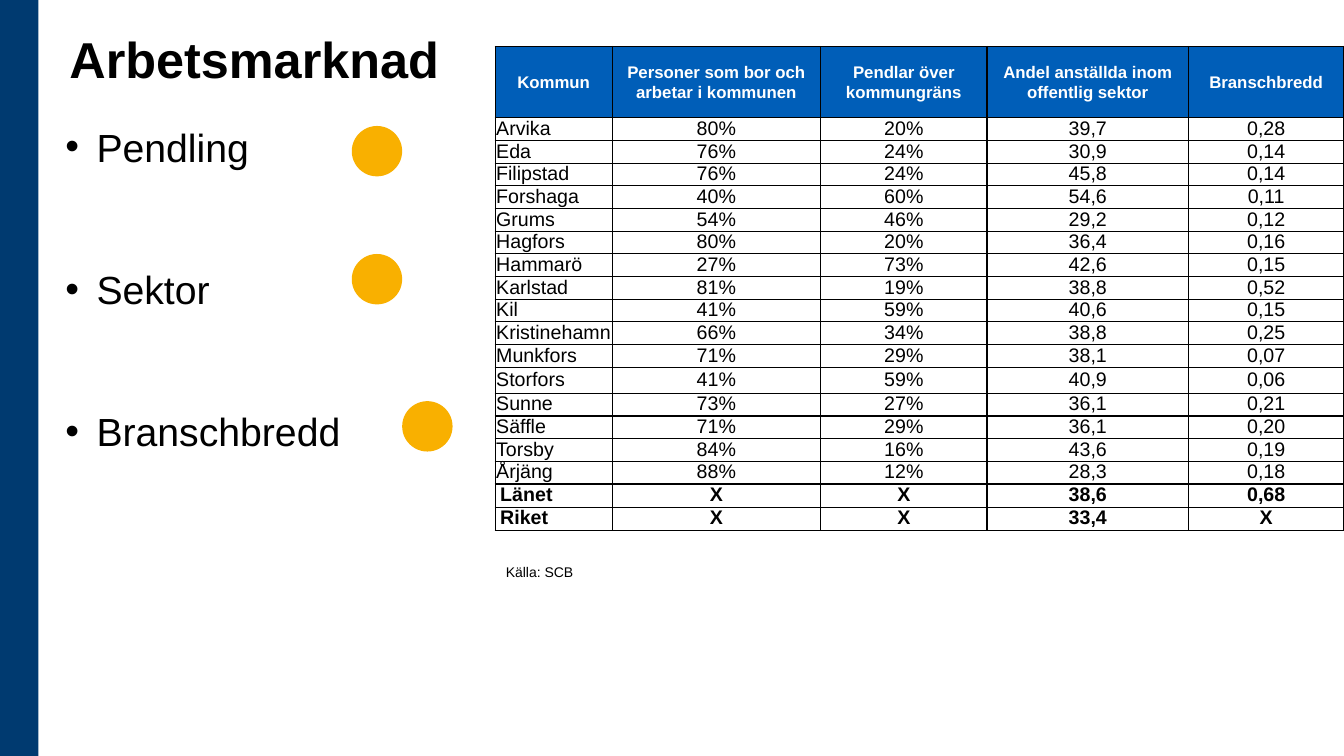
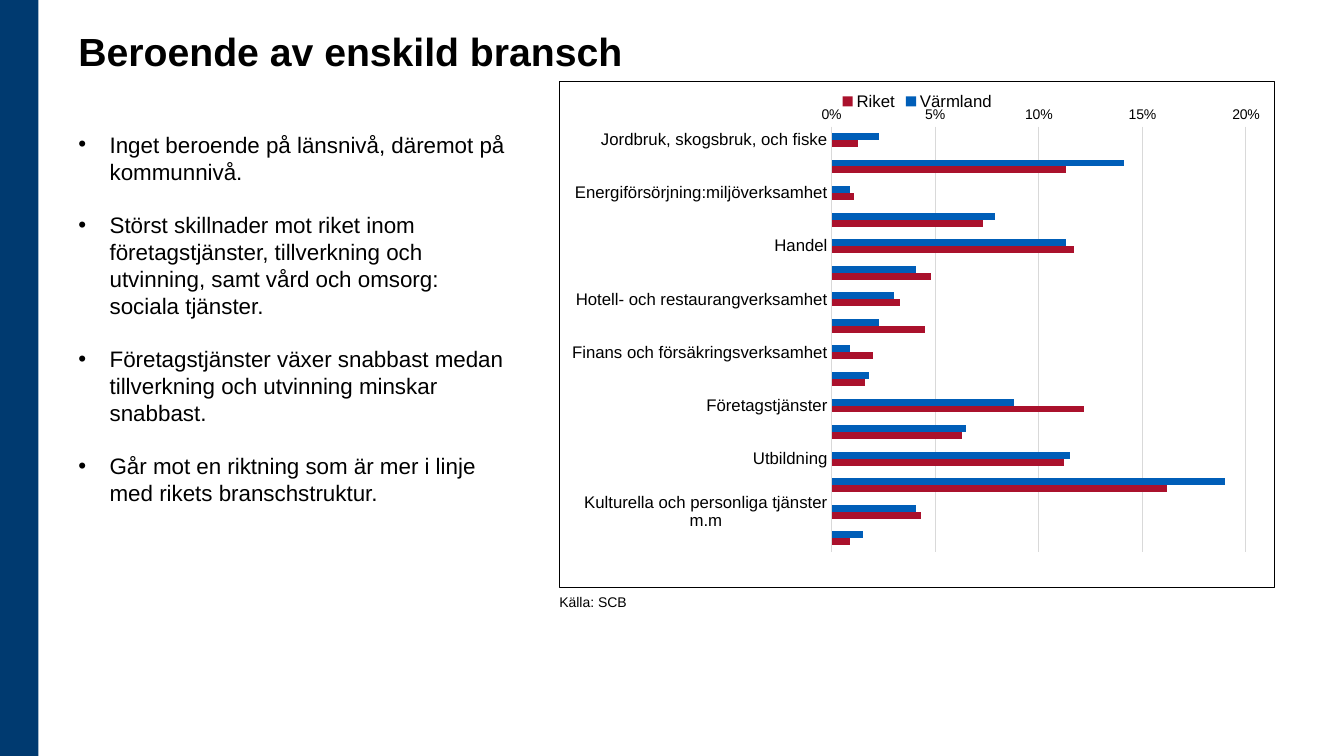
from lxml import etree
from pptx import Presentation
from pptx import util as u
from pptx.chart.data import CategoryChartData
from pptx.dml.color import RGBColor
from pptx.enum import chart as charts, shapes, text
from pptx.oxml import parse_xml
from pptx.oxml.ns import nsdecls, qn

CELL = u.Inches(1 / 12)
COLUMNS, ROWS = 160, 90
FONT = "Arial"
BLACK = RGBColor(0, 0, 0)
WHITE = RGBColor(255, 255, 255)
NAVY = RGBColor(0x00, 0x3A, 0x70)
BLUE = RGBColor(0x00, 0x5E, 0xB8)
RED = RGBColor(0xAA, 0x11, 0x2C)
AMBER = RGBColor(0xF9, 0xB0, 0x00)
GREY = RGBColor(0xD9, 0xD9, 0xD9)


def grid(*cells):
    return [round(cell * CELL) for cell in cells]


def add_text(page, place, lines, size, bold=False, anchor=text.MSO_ANCHOR.TOP, bullet_gap=None):
    box = page.shapes.add_textbox(*grid(*place))
    frame = box.text_frame
    frame.word_wrap = True
    frame.vertical_anchor = anchor
    frame.text = "\n".join(lines)
    for index, para in enumerate(frame.paragraphs):
        if bullet_gap is not None:
            properties = para._p.get_or_add_pPr()
            properties.set("marL", str(u.Inches(0.31)))
            properties.set("indent", str(-u.Inches(0.31)))
            etree.SubElement(properties, qn("a:buFont")).set("typeface", FONT)
            etree.SubElement(properties, qn("a:buChar")).set("char", "•")
            if index:
                para.space_before = u.Pt(bullet_gap)
        for span in para.runs:
            span.font.name = FONT
            span.font.size = u.Pt(size)
            span.font.bold = bold
            span.font.color.rgb = BLACK


deck = Presentation()
deck.slide_width, deck.slide_height = grid(COLUMNS, ROWS)

titles = [
    ("Arbetsmarknad", 36, (7.08, 1.8, 49.92, 9.36)),
    ("Beroende av enskild bransch", 28, (8.16, 1.2, 69.6, 8.28)),
]
for title, size, place in titles:
    page = deck.slides.add_slide(deck.slide_layouts[6])
    strip = page.shapes.add_shape(shapes.MSO_SHAPE.RECTANGLE, *grid(0, 0, 4.56, ROWS))
    strip.shadow.inherit = False
    strip.fill.solid()
    strip.fill.fore_color.rgb = NAVY
    strip.line.fill.background()
    add_text(page, place, [title], size, True, text.MSO_ANCHOR.BOTTOM)
labour_page, industry_page = deck.slides

headings = [
    "Kommun",
    "Personer som bor och arbetar i kommunen",
    "Pendlar över kommungräns",
    "Andel anställda inom offentlig sektor",
    "Branschbredd",
]
municipalities = """
Arvika 80% 20% 39,7 0,28
Eda 76% 24% 30,9 0,14
Filipstad 76% 24% 45,8 0,14
Forshaga 40% 60% 54,6 0,11
Grums 54% 46% 29,2 0,12
Hagfors 80% 20% 36,4 0,16
Hammarö 27% 73% 42,6 0,15
Karlstad 81% 19% 38,8 0,52
Kil 41% 59% 40,6 0,15
Kristinehamn 66% 34% 38,8 0,25
Munkfors 71% 29% 38,1 0,07
Storfors 41% 59% 40,9 0,06
Sunne 73% 27% 36,1 0,21
Säffle 71% 29% 36,1 0,20
Torsby 84% 16% 43,6 0,19
Årjäng 88% 12% 28,3 0,18
Länet X X 38,6 0,68
Riket X X 33,4 X
"""
records = [headings] + [line.split() for line in municipalities.strip().splitlines()]
column_widths = grid(13.92, 24.84, 19.8, 24, 18.48)
row_heights = grid(8.52, *[2.7] * 11, 3.12, *[2.7] * 4, 2.75, 2.75)
table = labour_page.shapes.add_table(
    len(records), len(headings), *grid(58.95, 5.52), sum(column_widths), sum(row_heights)
).table
table.first_row = table.horz_banding = False
for column, width in zip(table.columns, column_widths):
    column.width = width
for row_index, record in enumerate(records):
    table.rows[row_index].height = row_heights[row_index]
    is_header = row_index == 0
    is_total = record[0] in ("Länet", "Riket")
    for column_index, value in enumerate(record):
        cell = table.cell(row_index, column_index)
        cell.text = value
        cell.vertical_anchor = text.MSO_ANCHOR.MIDDLE
        cell.margin_left = cell.margin_right = u.Inches(0.05 if is_header or is_total else 0.01)
        cell.margin_top = cell.margin_bottom = 0
        for side in ("lnL", "lnR", "lnT", "lnB"):
            cell._tc.get_or_add_tcPr().append(parse_xml(
                f'<a:{side} {nsdecls("a")} w="{u.Pt(1)}"><a:solidFill>'
                f'<a:srgbClr val="{BLACK}"/></a:solidFill></a:{side}>'
            ))
        if is_header:
            cell.fill.solid()
            cell.fill.fore_color.rgb = BLUE
        else:
            cell.fill.background()
        para = cell.text_frame.paragraphs[0]
        para.line_spacing = 1.07 if is_header else 0.95
        if is_header or column_index:
            para.alignment = text.PP_ALIGN.CENTER
        font = para.runs[0].font
        font.name = FONT
        font.size = u.Pt(12 if is_header else 14)
        font.bold = is_header or is_total
        font.color.rgb = WHITE if is_header else BLACK

add_text(labour_page, (59.04, 66.48, 12.24, 3.24), ["Källa: SCB"], 10, anchor=text.MSO_ANCHOR.MIDDLE)
add_text(labour_page, (6.6, 14.04, 53.28, 44.4), ["Pendling", "Sektor", "Branschbredd"], 28, bullet_gap=68)
for left, top in [(41.88, 15), (41.88, 30.24), (47.88, 47.76)]:
    marker = labour_page.shapes.add_shape(shapes.MSO_SHAPE.FLOWCHART_CONNECTOR, *grid(left, top, 6, 6))
    marker.shadow.inherit = False
    marker.fill.solid()
    marker.fill.fore_color.rgb = AMBER
    marker.line.fill.background()

shares = [
    ("Jordbruk, skogsbruk, och fiske", 0.023, 0.013),
    ("Tillverkning och utvinning", 0.141, 0.113),
    ("Energiförsörjning:miljöverksamhet", 0.009, 0.011),
    ("Byggverksamhet", 0.079, 0.073),
    ("Handel", 0.113, 0.117),
    ("Transport och magasinering", 0.041, 0.048),
    ("Hotell- och restaurangverksamhet", 0.03, 0.033),
    ("Information och kommunikation", 0.023, 0.045),
    ("Finans och försäkringsverksamhet", 0.009, 0.02),
    ("Fastighetsverksamhet", 0.018, 0.016),
    ("Företagstjänster", 0.088, 0.122),
    ("Offentlig förvaltning och försvar", 0.065, 0.063),
    ("Utbildning", 0.115, 0.112),
    ("Vård och omsorg: sociala tjänster", 0.19, 0.162),
    ("Kulturella och personliga tjänster m.m", 0.041, 0.043),
    ("Okänt", 0.015, 0.009),
]
industries, county, nation = zip(*shares)
data = CategoryChartData(number_format="0%")
data.categories = industries
data.add_series("Värmland", county)
data.add_series("Riket", nation)
chart = industry_page.shapes.add_chart(
    charts.XL_CHART_TYPE.BAR_CLUSTERED, *grid(66.6, 9.6, 85.2, 60.36), data
).chart
chart.has_title = False
chart.has_legend = True
chart.legend.position = charts.XL_LEGEND_POSITION.TOP
chart.legend.include_in_layout = False

plot = chart.plots[0]
plot.gap_width = 182
plot.overlap = 0
plot.vary_by_categories = False
for series, color in zip(plot.series, (BLUE, RED)):
    series.format.fill.solid()
    series.format.fill.fore_color.rgb = color

category_axis, value_axis = chart.category_axis, chart.value_axis
category_axis.reverse_order = True
category_axis.crosses_at = len(industries) + 1
category_axis.format.line.color.rgb = GREY
category_axis.format.line.width = u.Pt(0.75)
value_axis.format.line.fill.background()
value_axis.major_unit = 0.05
value_axis.minimum_scale, value_axis.maximum_scale = 0, 0.2
value_axis.major_gridlines.format.line.color.rgb = GREY
value_axis.major_gridlines.format.line.width = u.Pt(0.75)
value_axis.tick_labels.number_format = "0%"
value_axis.tick_labels.number_format_is_linked = False
for axis in (category_axis, value_axis):
    axis.major_tick_mark = axis.minor_tick_mark = charts.XL_TICK_MARK.NONE
chart_fonts = [
    (chart.font, 10),
    (chart.legend.font, 12),
    (category_axis.tick_labels.font, 12),
    (value_axis.tick_labels.font, 10),
]
for font, size in chart_fonts:
    font.name = FONT
    font.size = u.Pt(size)
    font.color.rgb = BLACK

plot_area = chart._chartSpace.chart.plotArea
for layout in plot_area.findall(qn("c:layout")):
    plot_area.remove(layout)
plot_area.insert(0, parse_xml(
    f'<c:layout {nsdecls("c")}><c:manualLayout><c:layoutTarget val="inner"/>'
    '<c:xMode val="edge"/><c:yMode val="edge"/><c:x val="0.38"/><c:y val="0.09"/>'
    '<c:w val="0.58"/><c:h val="0.84"/></c:manualLayout></c:layout>'
))
chart._chartSpace.chart.addnext(parse_xml(
    f'<c:spPr {nsdecls("c", "a")}><a:solidFill><a:srgbClr val="{WHITE}"/></a:solidFill>'
    f'<a:ln w="{u.Pt(0.75)}"><a:solidFill><a:srgbClr val="{BLACK}"/></a:solidFill></a:ln></c:spPr>'
))

findings = [
    "Inget beroende på länsnivå, däremot på kommunnivå.",
    "Störst skillnader mot riket inom företagstjänster, tillverkning och utvinning, "
    "samt vård och omsorg: sociala tjänster.",
    "Företagstjänster växer snabbast medan tillverkning och utvinning minskar snabbast.",
    "Går mot en riktning som är mer i linje med rikets branschstruktur.",
]
add_text(industry_page, (8.16, 15, 53.28, 72.72), findings, 16, bullet_gap=19)
add_text(industry_page, (65.4, 70.08, 22.68, 3.24), ["Källa: SCB"], 10)

deck.save("out.pptx")
